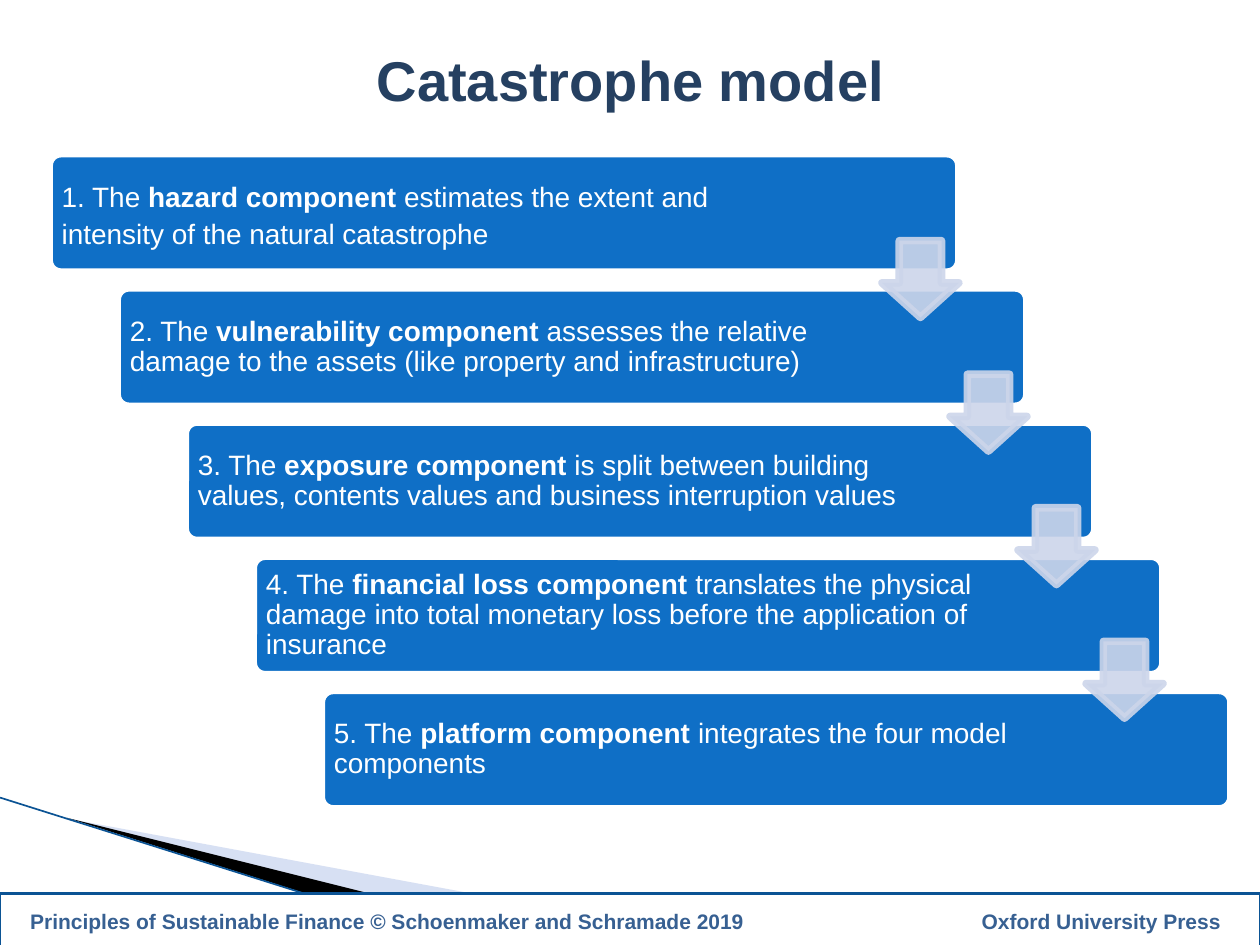
import dataclasses

import lxml.etree
import pptx
import pptx.dml.color
import pptx.enum.shapes
import pptx.enum.text
import pptx.oxml.ns
import pptx.util

Inches = pptx.util.Inches
Pt = pptx.util.Pt
SHAPE = pptx.enum.shapes.MSO_SHAPE
ALIGN = pptx.enum.text.PP_ALIGN
qn = pptx.oxml.ns.qn


@dataclasses.dataclass(frozen=True)
class Theme:
    font: str = "Arial"
    white: str = "FFFFFF"
    black: str = "000000"
    step: str = "0F6FC6"
    arrow: str = "CCD5EA"
    wedge: str = "9DB2E1"
    wedge_line: str = "94ABDC"
    title: str = "254061"
    footer: str = "376092"
    footer_line: str = "0B5394"
    title_size: int = 32
    body_size: int = 16
    footer_size: int = 12


def rgb(color):
    return pptx.dml.color.RGBColor.from_string(color)


def set_alpha(fill_parent, percent):
    for color in fill_parent.iter(qn("a:srgbClr")):
        alpha = lxml.etree.SubElement(color, qn("a:alpha"))
        alpha.set("val", str(percent * 1000))


def add_text(p, text, *, font, size, color, bold=False):
    r = p.add_run()
    r.text = text
    r.font.name = font
    r.font.size = Pt(size)
    r.font.bold = bold
    r.font.color.rgb = rgb(color)


class SlideBuilder:
    def __init__(self, slide, theme):
        self.s = slide
        self.theme = theme

    def paint(self, sp, fill, line=None, width=0, alpha=100):
        sp.shadow.inherit = False
        sp.fill.solid()
        sp.fill.fore_color.rgb = rgb(fill)
        if line:
            sp.line.color.rgb = rgb(line)
            sp.line.width = Pt(width)
        else:
            sp.line.fill.background()
        if alpha < 100:
            set_alpha(sp.fill._xPr, alpha)

    def shape(self, kind, x, y, w, h, fill, adjust=(), **style):
        sp = self.s.shapes.add_shape(kind, Inches(x), Inches(y), Inches(w), Inches(h))
        for i, value in enumerate(adjust):
            sp.adjustments[i] = value
        self.paint(sp, fill, **style)
        return sp

    def polygon(self, points, fill, alpha=100):
        corners = [(Inches(x), Inches(y)) for x, y in points]
        builder = self.s.shapes.build_freeform(*corners[0])
        builder.add_line_segments(corners[1:], close=True)
        self.paint(builder.convert_to_shape(), fill, alpha=alpha)

    def line(self, x1, y1, x2, y2, color, width):
        cx = self.s.shapes.add_connector(
            pptx.enum.shapes.MSO_CONNECTOR.STRAIGHT,
            Inches(x1), Inches(y1), Inches(x2), Inches(y2))
        cx.line.color.rgb = rgb(color)
        cx.line.width = Pt(width)
        lxml.etree.SubElement(cx._element.spPr, qn("a:effectLst"))

    def title(self, text):
        t = self.theme
        sp = self.shape(SHAPE.RECTANGLE, 0.28, 0.27, 9.45, 0.71, t.white)
        p = sp.text_frame.paragraphs[0]
        p.alignment = ALIGN.CENTER
        add_text(p, text, font=t.font, size=t.title_size, color=t.title, bold=True)

    def step(self, x, y, text_width, spacing, runs):
        t = self.theme
        self.shape(SHAPE.ROUNDED_RECTANGLE, x, y, 7.22, 0.94, t.step,
                   adjust=(0.1,), line=t.white, width=4.33)
        box = self.s.shapes.add_textbox(
            Inches(x + 0.03), Inches(y + 0.03), Inches(text_width), Inches(0.88))
        tf = box.text_frame
        tf.word_wrap = True
        tf.vertical_anchor = pptx.enum.text.MSO_ANCHOR.MIDDLE
        tf.margin_left = tf.margin_right = Inches(0.07)
        tf.margin_top = tf.margin_bottom = Inches(0.07)
        p = tf.paragraphs[0]
        p.line_spacing = spacing
        for i, text in enumerate(runs):
            add_text(p, text, font=t.font, size=t.body_size, color=t.white, bold=i == 1)

    def arrow(self, x, y):
        t = self.theme
        sp = self.shape(SHAPE.DOWN_ARROW, x, y, 0.61, 0.61, t.arrow,
                        adjust=(0.55, 0.45), line=t.arrow, width=4.33, alpha=90)
        set_alpha(sp.line._ln, 90)

    def footer(self, left, right):
        t = self.theme
        sp = self.shape(SHAPE.RECTANGLE, 0, 7.09, 10, 0.44, t.white,
                        line=t.footer_line, width=1.5)
        tf = sp.text_frame
        tf.margin_left = Inches(0.24)
        p = tf.paragraphs[0]
        p.alignment = ALIGN.LEFT
        tabs = lxml.etree.SubElement(p._p.get_or_add_pPr(), qn("a:tabLst"))
        tab = lxml.etree.SubElement(tabs, qn("a:tab"))
        tab.set("pos", str(Inches(9.45)))
        tab.set("algn", "r")
        add_text(p, f"{left}\t{right}", font=t.font, size=t.footer_size,
                 color=t.footer, bold=True)


STEPS = [
    ("1. The ", "hazard component ",
     "estimates the extent and intensity of the natural catastrophe"),
    ("2. The ", "vulnerability component ",
     "assesses the relative damage to the assets (like property and infrastructure)"),
    ("3. The ", "exposure component",
     " is split between building values, contents values and business interruption values"),
    ("4. The ", "financial loss component ",
     "translates the physical damage into total monetary loss before the application"
     " of insurance"),
    ("5. The ", "platform component ", "integrates the four model components"),
]


def main():
    prs = pptx.Presentation()
    prs.slide_width = Inches(10)
    prs.slide_height = Inches(7.5)
    theme = Theme()
    b = SlideBuilder(prs.slides.add_slide(prs.slide_layouts[6]), theme)

    b.polygon([(0.55, 6.5), (5.95, 7.5), (4.56, 7.5)], theme.wedge, alpha=40)
    b.polygon([(0.53, 6.49), (4.57, 7.5), (3.72, 7.5)], theme.black)
    b.line(0, 6.33, 3.71, 7.5, theme.footer_line, 0.95)

    for i, runs in enumerate(STEPS):
        first = i == 0
        b.step(0.39 + 0.54 * i, 1.22 + 1.065 * i,
               6.1 if first else 6.01, 1.1 if first else 0.9, runs)
    for i in range(len(STEPS) - 1):
        b.arrow(7 + 0.54 * i, 1.91 + 1.06 * i)

    b.title("Catastrophe model")
    b.footer("Principles of Sustainable Finance © Schoenmaker and Schramade 2019",
             "Oxford University Press")
    prs.save("out.pptx")


if __name__ == "__main__":
    main()
